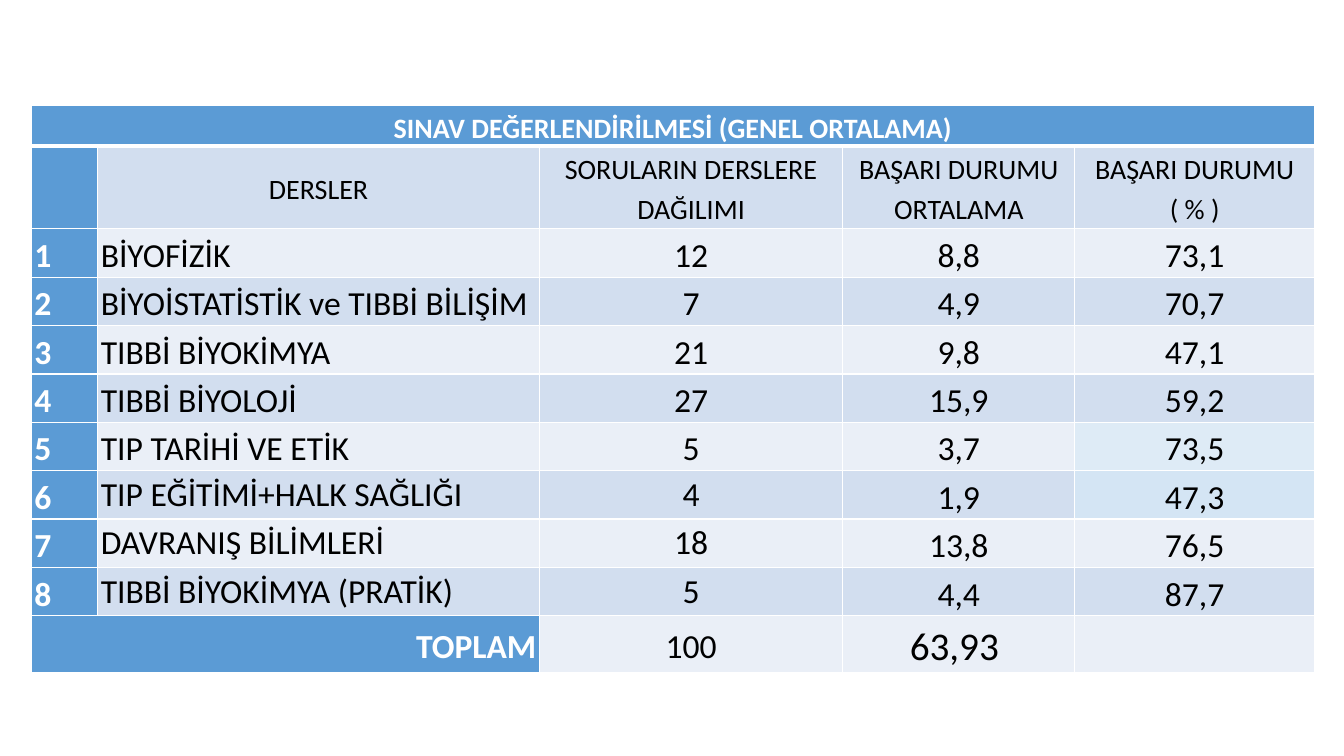
from pptx import Presentation
from pptx.util import Inches, Pt
from pptx.dml.color import RGBColor
from pptx.enum.text import PP_ALIGN, MSO_ANCHOR
from pptx.oxml import parse_xml
from pptx.oxml.ns import nsdecls

LEFT, MID, RIGHT = PP_ALIGN.LEFT, PP_ALIGN.CENTER, PP_ALIGN.RIGHT
CENTER, TOP = MSO_ANCHOR.MIDDLE, MSO_ANCHOR.TOP

THEME = {
    "font": "Calibri", "head": 20, "body": 24, "sum": 28,
    "blue": "5B9BD5", "dark": "D2DEEF", "light": "EAEFF7",
    "white": "FFFFFF", "black": "000000",
}
TINTS = {(6, 4): "DEEBF6", (7, 4): "D4E5F4"}

COLS = [0.66, 4.38, 3.01, 2.3, 2.38]
ROWS = [0.4, 0.82] + [0.48] * 8 + [0.56]
LAST = len(ROWS) - 1

DATA = [
    ["SINAV DEĞERLENDİRİLMESİ (GENEL ORTALAMA)", "", "", "", ""],
    ["", "DERSLER", "SORULARIN DERSLERE\nDAĞILIMI",
     "BAŞARI DURUMU\nORTALAMA", "BAŞARI DURUMU\n( % )"],
    ["1", "BİYOFİZİK", "12", "8,8", "73,1"],
    ["2", "BİYOİSTATİSTİK ve TIBBİ BİLİŞİM", "7", "4,9", "70,7"],
    ["3", "TIBBİ BİYOKİMYA", "21", "9,8", "47,1"],
    ["4", "TIBBİ BİYOLOJİ", "27", "15,9", "59,2"],
    ["5", "TIP TARİHİ VE ETİK", "5", "3,7", "73,5"],
    ["6", "TIP EĞİTİMİ+HALK SAĞLIĞI", "4", "1,9", "47,3"],
    ["7", "DAVRANIŞ BİLİMLERİ", "18", "13,8", "76,5"],
    ["8", "TIBBİ BİYOKİMYA (PRATİK)", "5", "4,4", "87,7"],
    ["TOPLAM", "", "100", "63,93 ", ""],
]


def write(cell, text, size, color, bold, align, space):
    """Fill a cell with one paragraph, a run per line."""
    para = cell.text_frame.paragraphs[0]
    para.alignment = align
    para.line_spacing = space
    for n, line in enumerate(text.split("\n")):
        if n:
            para.add_line_break()
        run = para.add_run()
        run.text = line
        run.font.name = THEME["font"]
        run.font.size = Pt(size)
        run.font.bold = bold
        run.font.color.rgb = RGBColor.from_string(color)


def edge(cell, widths):
    """Draw the left, right, top and bottom borders, in points."""
    props = cell._tc.get_or_add_tcPr()
    for n, (side, width) in enumerate(zip("LRTB", widths)):
        props.insert(n, parse_xml(
            f'<a:ln{side} {nsdecls("a")} w="{Pt(width)}"><a:solidFill>'
            f'<a:srgbClr val="{THEME["white"]}"/></a:solidFill></a:ln{side}>'))


# Slide
deck = Presentation()
deck.slide_width, deck.slide_height = Inches(13.33), Inches(7.5)
slide = deck.slides.add_slide(deck.slide_layouts[6])

# Table grid
frame = slide.shapes.add_table(
    len(ROWS), len(COLS), Inches(0.31), Inches(1.05),
    Inches(sum(COLS)), Inches(sum(ROWS)))
table = frame.table
for col, width in zip(table.columns, COLS):
    col.width = Inches(width)
for row, height in zip(table.rows, ROWS):
    row.height = Inches(height)
table.cell(0, 0).merge(table.cell(0, 4))
table.cell(LAST, 0).merge(table.cell(LAST, 1))

# Cells
for r, line in enumerate(DATA):
    for c, text in enumerate(line):
        cell = table.cell(r, c)
        blue = r == 0 or c == 0 or (r == LAST and c == 1)
        band = THEME["dark" if r % 2 else "light"]
        fill = THEME["blue"] if blue else TINTS.get((r, c), band)
        cell.fill.solid()
        cell.fill.fore_color.rgb = RGBColor.from_string(fill)
        edge(cell, (1, 1, 3 if r == 1 else 1, 3 if r == 0 else 1))
        if not text:
            continue

        total = (r, c) == (LAST, 3)
        cell.margin_left = cell.margin_right = Inches(0.03)
        cell.margin_top = cell.margin_bottom = 0
        cell.vertical_anchor = TOP if total else CENTER
        size = THEME["sum" if total else "head" if r < 2 else "body"]
        align = MID
        if r == LAST and c == 0:
            align = RIGHT
        elif 1 < r < LAST and c < 2:
            align = LEFT
        tight = 7 <= r < LAST and c in (1, 2)
        write(cell, text, size, THEME["white" if blue else "black"],
              blue, align, 1.0 if tight else 1.15)

deck.save("out.pptx")
